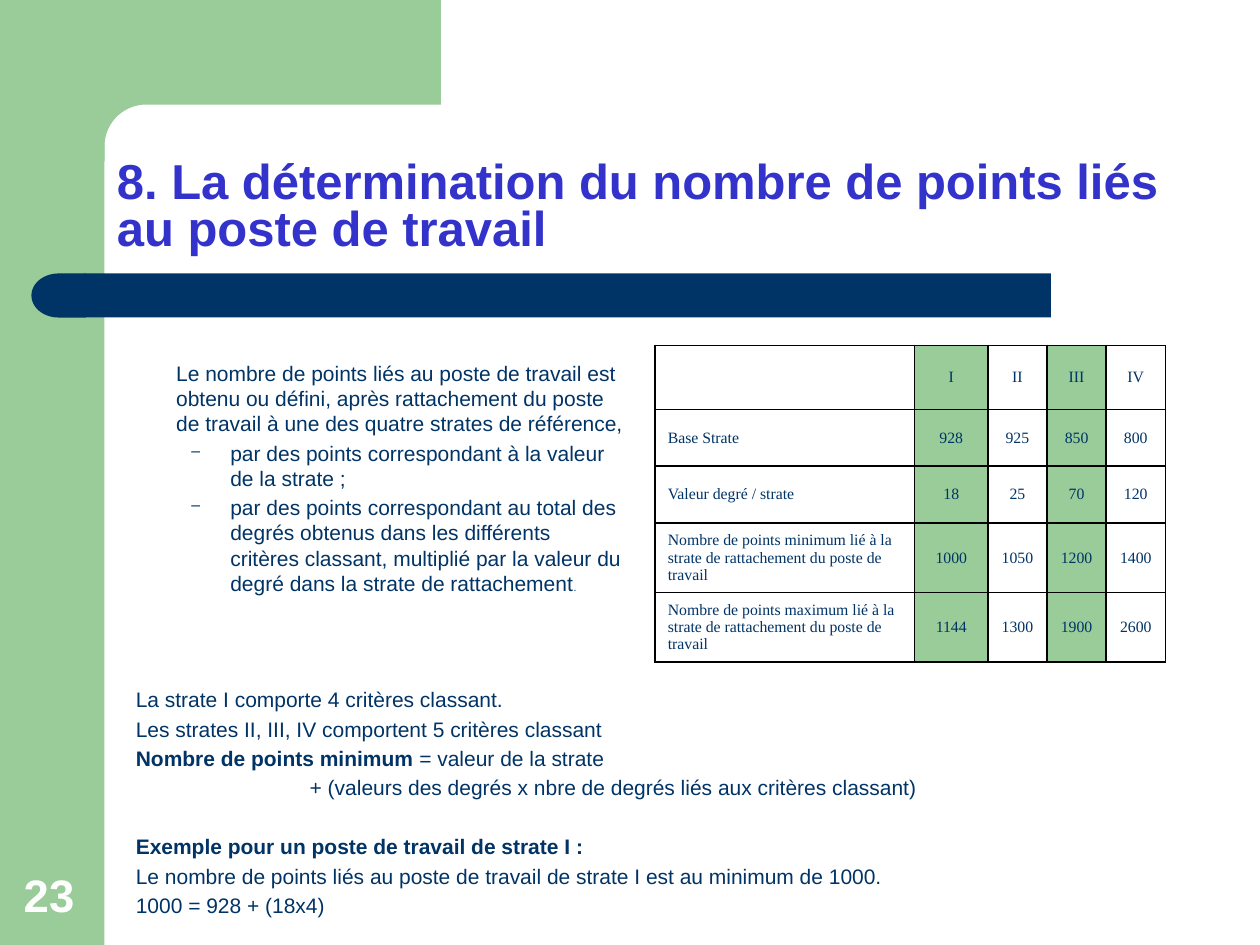
from math import cos, radians, sin
from lxml import etree
from pptx import Presentation
from pptx.dml.color import RGBColor
from pptx.enum.shapes import MSO_SHAPE as SHAPE
from pptx.enum.text import MSO_ANCHOR as ANCHOR, PP_ALIGN as ALIGN
from pptx.oxml.ns import qn
from pptx.util import Inches, Pt

C = {"green": "99CC99", "navy": "003366", "blue": "3333CC", "white": "FFFFFF", "black": "000000"}

prs = Presentation()
prs.slide_width, prs.slide_height = Inches(10), Inches(7.5)
s = prs.slides.add_slide(prs.slide_layouts[6])


def paint(sp, color):
    sp.shadow.inherit = False
    sp.fill.solid()
    sp.fill.fore_color.rgb = RGBColor.from_string(C[color])
    sp.line.fill.background()


def write(p, text, size=12, color="navy", bold=False, font="Arial", align=ALIGN.LEFT,
          before=0, left=0, hang=0, bullet=None):
    r = p.add_run()
    r.text = text
    r.font.size, r.font.name, r.font.bold = Pt(size), font, bold
    r.font.color.rgb = RGBColor.from_string(C[color])
    p.alignment = align
    p.space_before = Pt(before)
    pPr = p._p.get_or_add_pPr()
    pPr.set("marL", str(Inches(left)))
    pPr.set("indent", str(-Inches(hang)))
    if bullet:
        etree.SubElement(pPr, qn("a:buSzPct"), val="75000")
        etree.SubElement(pPr, qn("a:buChar"), char=bullet)
    return p


paint(s.shapes.add_shape(SHAPE.RECTANGLE, 0, 0, Inches(0.83), Inches(7.5)), "green")

arc = [(1.16 + 0.33 * cos(radians(a)), 1.16 + 0.33 * sin(radians(a))) for a in range(270, 179, -6)]
corner = [(3.5, 0), (3.5, 0.83), *arc, (0.83, 1.28), (0.5, 1.28)]
fb = s.shapes.build_freeform(Inches(0.5), 0)
fb.add_line_segments([(Inches(x), Inches(y)) for x, y in corner], close=True)
paint(fb.convert_to_shape(), "green")

paint(s.shapes.add_shape(SHAPE.RECTANGLE, Inches(0.67), Inches(2.17), Inches(7.67), Inches(0.35)), "navy")
cap = s.shapes.add_shape(SHAPE.FLOWCHART_DELAY, Inches(0.25), Inches(2.17), Inches(0.43), Inches(0.35))
paint(cap, "navy")
cap._element.spPr.find(qn("a:xfrm")).set("flipH", "1")

title = "8. La détermination du nombre de points liés au poste de travail"
body = [
    ("Le nombre de points liés au poste de travail est obtenu ou défini, après rattachement du poste "
     "de travail à une des quatre strates de référence,", dict(before=2.4, left=0.38)),
    *[(text, dict(before=2.4, left=0.81, hang=0.31, bullet="–")) for text in (
        "par des points correspondant à la valeur de la strate ;",
        "par des points correspondant au total des degrés obtenus dans les différents critères classant, "
        "multiplié par la valeur du degré dans la strate de rattachement")],
]
rule = dict(before=2.4, left=0.38, hang=0.38)
example = [
    ("La strate I comporte 4 critères classant.", rule),
    ("Les strates II, III, IV comportent 5 critères classant", rule),
    ("Nombre de points minimum ", dict(rule, bold=True)),
    ("+ (valeurs des degrés x nbre de degrés liés aux critères classant)", dict(before=2.4, left=1.38)),
    ("Exemple pour un poste de travail de strate I :", dict(rule, bold=True, before=19.2)),
    ("Le nombre de points liés au poste de travail de strate I est au minimum de 1000.", rule),
    ("1000 = 928 + (18x4)", rule),
]
boxes = [
    (0.09, 6.83, 0.64, 0.53, ANCHOR.BOTTOM, [("23", dict(size=26, color="white", bold=True))]),
    (0.83, 1.23, 8.67, 0.85, ANCHOR.BOTTOM, [(title, dict(size=28, color="blue", bold=True))]),
    (0.92, 2.81, 4.13, 2.12, ANCHOR.TOP, body),
    (0.98, 5.4, 7.56, 1.98, ANCHOR.TOP, example),
]
frames = []
for x, y, w, h, anchor, lines in boxes:
    tf = s.shapes.add_textbox(Inches(x), Inches(y), Inches(w), Inches(h)).text_frame
    tf.word_wrap, tf.vertical_anchor = True, anchor
    for i, (text, fmt) in enumerate(lines):
        write(tf.add_paragraph() if i else tf.paragraphs[0], text, **fmt)
    frames.append(tf)
number_tf, title_tf, body_tf, example_tf = frames
title_tf.paragraphs[0].line_spacing = 0.8
write(body_tf.paragraphs[-1], ".", size=6, before=2.4, left=0.81, hang=0.31)
write(example_tf.paragraphs[2], "= valeur de la strate", **rule)

rows = [
    ("", "I", "II", "III", "IV"),
    ("Base Strate", "928", "925", "850", "800"),
    ("Valeur degré / strate", "18", "25", "70", "120"),
    ("Nombre de points minimum lié à la strate de rattachement du poste de travail",
     "1000", "1050", "1200", "1400"),
    ("Nombre de points maximum lié à la strate de rattachement du poste de travail",
     "1144", "1300", "1900", "2600"),
]
widths = [2.06, 0.58, 0.47, 0.47, 0.47]
heights = [0.51, 0.45, 0.45, 0.51, 0.51]
tbl = s.shapes.add_table(len(rows), len(widths), Inches(5.2), Inches(2.74),
                         Inches(sum(widths)), Inches(sum(heights))).table
tbl.first_row = tbl.horz_banding = False
for col, w in zip(tbl.columns, widths):
    col.width = Inches(w)
for row, h, values in zip(tbl.rows, heights, rows):
    row.height = Inches(h)
    for j, (cell, text) in enumerate(zip(row.cells, values)):
        cell.vertical_anchor = ANCHOR.MIDDLE
        tcPr = cell._tc.get_or_add_tcPr()
        for side in ("lnL", "lnR", "lnT", "lnB"):
            ln = etree.SubElement(tcPr, qn("a:" + side), w=str(Pt(1)))
            fill = etree.SubElement(ln, qn("a:solidFill"))
            etree.SubElement(fill, qn("a:srgbClr"), val=C["black"])
        if j in (1, 3):
            cell.fill.solid()
            cell.fill.fore_color.rgb = RGBColor.from_string(C["green"])
        else:
            cell.fill.background()
        if text:
            write(cell.text_frame.paragraphs[0], text, size=9, font="Times New Roman",
                  align=ALIGN.CENTER if j else ALIGN.LEFT)

prs.save("out.pptx")
